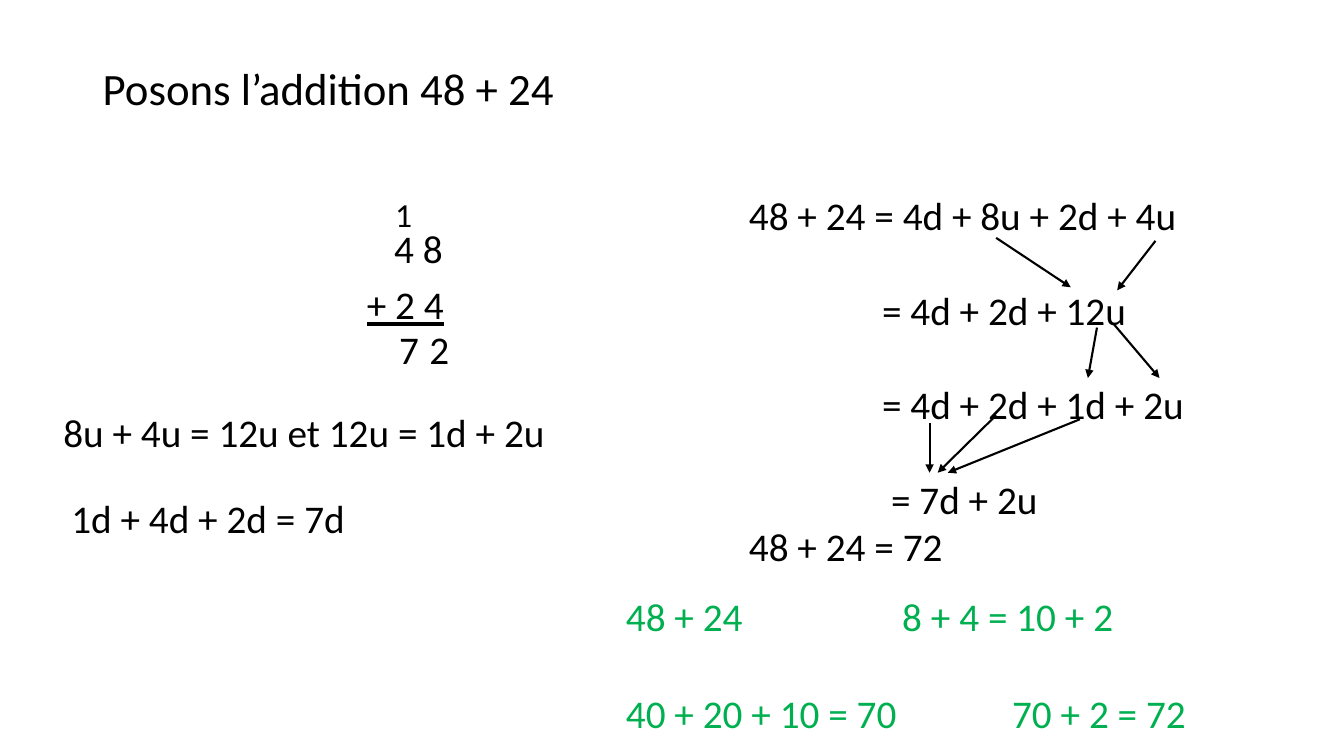
from pptx import Presentation
from pptx import util as u
from pptx.dml import color
from pptx.enum import shapes, text
from pptx.oxml import ns
from lxml import etree

PX = 9144
BLACK = "000000"
GREEN = "00B050"


def px(length):
    """Turn a length of 100 px to the inch into EMU."""
    return u.Emu(length * PX)


def rgb(value):
    """Turn a hex string into a colour."""
    return color.RGBColor.from_string(value)


def add_text(page, box, lines, size=28, ink=BLACK, spacing=1.0, wrap=True,
             anchor=text.MSO_ANCHOR.TOP):
    """Write lines, each a dict of text, indent, before, tab and underline."""
    frame = page.shapes.add_textbox(*map(px, box)).text_frame
    frame.word_wrap = wrap
    frame.vertical_anchor = anchor
    for index, line in enumerate(lines):
        para = frame.paragraphs[0] if index == 0 else frame.add_paragraph()
        para.line_spacing = spacing
        para.space_before = u.Pt(line.get("before", 0))
        props = para._p.get_or_add_pPr()
        props.set("marL", str(px(line.get("indent", 0))))
        if "tab" in line:
            stops = etree.SubElement(props, ns.qn("a:tabLst"))
            etree.SubElement(stops, ns.qn("a:tab"), pos=str(px(line["tab"])), algn="l")
        span = para.add_run()
        span.text = line["text"]
        span.font.name = "Calibri"
        span.font.size = u.Pt(size)
        span.font.color.rgb = rgb(ink)
        span.font.underline = line.get("underline", False)


def add_arrow(page, start, end):
    """Draw a black arrow from start to end."""
    arrow = page.shapes.add_connector(
        shapes.MSO_CONNECTOR.STRAIGHT, *map(px, start + end))
    arrow.line.color.rgb = rgb(BLACK)
    arrow.line.width = u.Pt(1.5)
    etree.SubElement(arrow.line._get_or_add_ln(), ns.qn("a:tailEnd"), type="triangle")
    etree.SubElement(arrow._element.spPr, ns.qn("a:effectLst"))


def add_title(page, box):
    """Place the title of the page."""
    add_text(page, box, [{"text": "Posons l’addition 48 + 24"}], size=32,
             spacing=0.9, anchor=text.MSO_ANCHOR.MIDDLE)


def add_column_sum(page, box):
    """Place the written addition with its carry and result."""
    left, top, width, height = box
    add_text(page, box, [{"text": "4 8", "indent": 27},
                         {"text": "+ 2 4", "before": 10, "underline": True}],
             spacing=0.9)
    add_text(page, (left + 28, top - 36, 37, 50), [{"text": "1"}], size=24, wrap=False)
    for digit, offset in (("7", 32), ("2", 62)):
        add_text(page, (left + offset, top + 95, 40, 57), [{"text": digit}], wrap=False)


def add_explanation(page, box):
    """Place the two sentences on units and tens."""
    left, top, width, height = box
    add_text(page, (left, top, width, 57), [{"text": "8u + 4u = 12u et 12u = 1d + 2u"}])
    add_text(page, (left + 8, top + 85, width, 57), [{"text": "1d + 4d + 2d = 7d"}])


def add_decomposition(page, box):
    """Place the sum split into tens and units, with its arrows."""
    left, top, width, height = box
    add_text(page, box, [
        {"text": "48 + 24 = 4d + 8u + 2d + 4u"},
        {"text": "= 4d + 2d + 12u", "indent": 132, "before": 34},
        {"text": "= 4d + 2d + 1d + 2u", "indent": 132, "before": 34},
        {"text": "= 7d + 2u", "indent": 141, "before": 34},
        {"text": "48 + 24 = 72"}], wrap=False)
    arrows = [((255, 51), (329, 100)), ((413, 54), (375, 103)),
              ((355, 140), (346, 190)), ((372, 137), (417, 190)),
              ((189, 235), (189, 284)), ((255, 227), (197, 284)),
              ((338, 231), (207, 284))]
    for start, end in arrows:
        add_arrow(page, *((left + x, top + y) for x, y in (start, end)))


def add_mental_sum(page, box):
    """Place the green mental calculation."""
    add_text(page, box, [
        {"text": "48 + 24\t8 + 4 = 10 + 2", "tab": 274},
        {"text": "40 + 20 + 10 = 70\t70 + 2 = 72", "tab": 383, "before": 39}],
        ink=GREEN, spacing=0.9)


def main():
    """Build the page and save the deck."""
    deck = Presentation()
    deck.slide_width, deck.slide_height = px(1333), px(750)
    page = deck.slides.add_slide(deck.slide_layouts[6])
    add_title(page, (92, 40, 1150, 100))
    add_column_sum(page, (354, 223, 122, 115))
    add_explanation(page, (53, 400, 550, 142))
    add_decomposition(page, (733, 185, 459, 417))
    add_mental_sum(page, (611, 588, 608, 145))
    deck.save("out.pptx")


if __name__ == "__main__":
    main()
